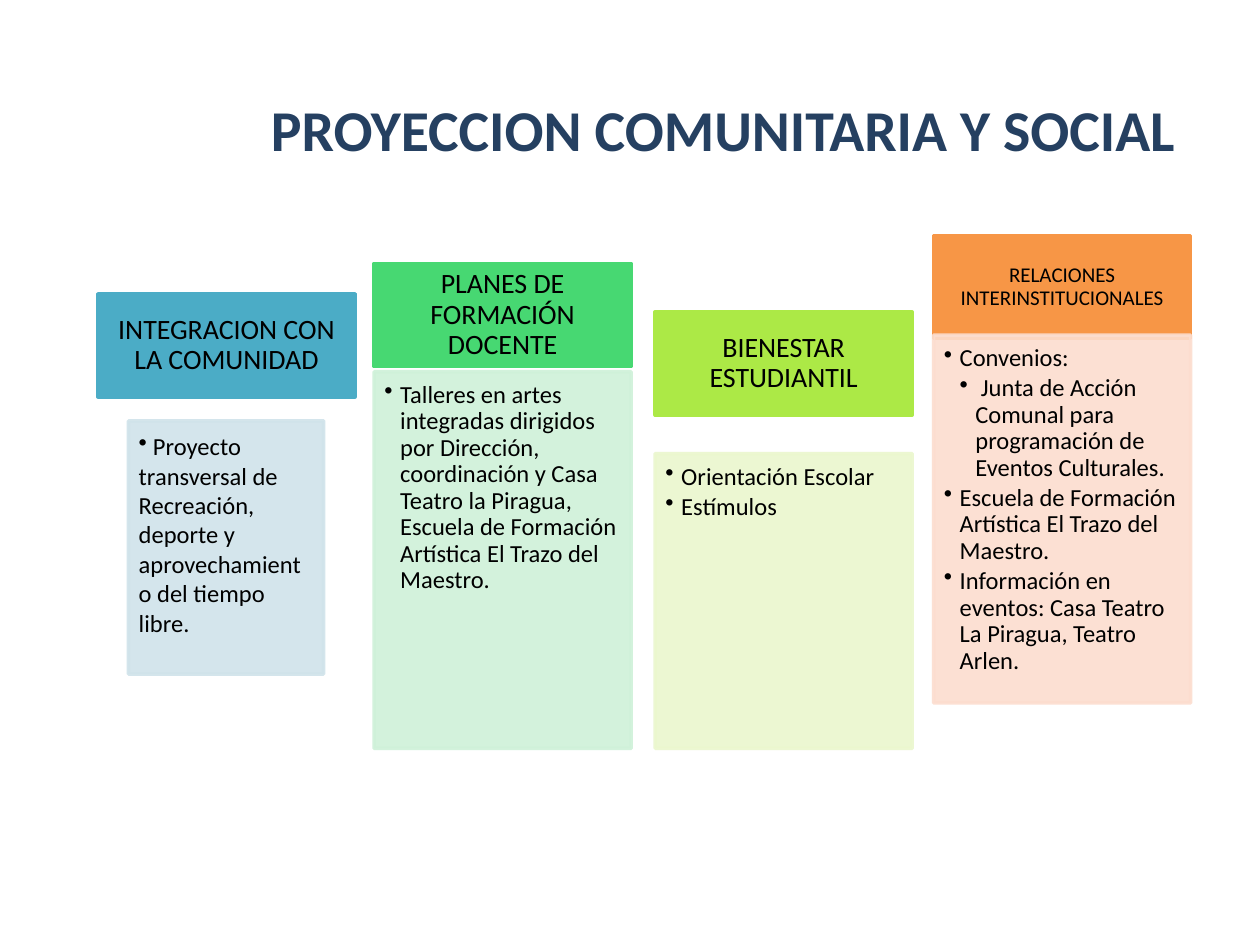
"""Build the slide on community and social outreach."""
from lxml.etree import SubElement as Sub
from pptx import Presentation as Deck
from pptx.dml.color import RGBColor as Rgb
from pptx.enum.shapes import MSO_SHAPE as Form
from pptx.enum.text import MSO_ANCHOR as Anchor, PP_ALIGN as Align
from pptx.oxml.ns import qn
from pptx.util import Pt

THEME = {"font": "Calibri", "title": "254061", "ink": "000000",
         "title_size": 33, "size": 14, "edge": 2, "alpha": 90}
TITLE = "PROYECCION COMUNITARIA Y SOCIAL"
HEAD = (146.9, 59)
BODY_PAD = (5.9, 5.9, 7.9, 8.8)
STEP = 9
CARDS = [
    {"head": "INTEGRACION CON LA COMUNIDAD", "size": 16, "pad": (8.6, 5),
     "at": (56, 167.8), "fill": "4BACC6", "tint": "D0E3EA",
     "box": (73.4, 240.5, 111.6, 144.7), "hang": False,
     "list": [(1, " Proyecto transversal de Recreación, deporte y "
                  "aprovechamiento del tiempo libre.")]},
    {"head": "PLANES DE FORMACIÓN DOCENTE", "size": 16, "pad": (8.6, 5),
     "at": (213.8, 150.5), "fill": "47D872", "tint": "CFF1D9",
     "box": (213.8, 212.4, 146.9, 215.3), "hang": True,
     "list": [(1, "Talleres en artes integradas dirigidos por Dirección, "
                  "coordinación y Casa Teatro la Piragua, Escuela de "
                  "Formación Artística El Trazo del Maestro.")]},
    {"head": "BIENESTAR ESTUDIANTIL", "size": 16, "pad": (8.6, 5),
     "at": (374.4, 178.2), "fill": "ACE946", "tint": "EBF7CE",
     "box": (374.4, 259.2, 146.9, 168.5), "hang": True,
     "list": [(1, "Orientación Escolar"), (1, "Estímulos")]},
    {"head": "RELACIONES INTERINSTITUCIONALES", "size": 12, "pad": (6.5, 3.7),
     "at": (533.5, 134.6), "fill": "F79646", "tint": "FCDDCF",
     "box": (533.5, 191.5, 146.9, 210.2), "hang": True,
     "list": [(1, "Convenios:"),
              (2, " Junta de Acción Comunal para programación de "
                  "Eventos Culturales."),
              (1, "Escuela de Formación Artística El Trazo del Maestro."),
              (1, "Información en eventos: Casa Teatro La Piragua, "
                  "Teatro Arlen.")]},
]


def write(para, text, size, hue, bold=False):
    run = para.add_run()
    run.text = text
    font = run.font
    font.name, font.size, font.bold = THEME["font"], Pt(size), bold
    font.color.rgb = Rgb.from_string(hue)


def panel(slide, box, hue, pad, anchor):
    shape = slide.shapes.add_shape(Form.RECTANGLE, *map(Pt, box))
    shape.shadow.inherit = False
    shape.fill.solid()
    shape.fill.fore_color.rgb = Rgb.from_string(hue)
    shape.line.color.rgb = Rgb.from_string(hue)
    shape.line.width = Pt(THEME["edge"])
    frame = shape.text_frame
    frame.word_wrap, frame.vertical_anchor = True, anchor
    (frame.margin_left, frame.margin_top,
     frame.margin_right, frame.margin_bottom) = map(Pt, pad)
    return shape


def fade(shape):
    for hue in shape._element.spPr.iter(qn("a:srgbClr")):
        Sub(hue, qn("a:alpha"), val=str(THEME["alpha"] * 1000))


def bullet(para, level, hang):
    props = para._p.get_or_add_pPr()
    props.set("marL", str(Pt(STEP * level if hang else 0)))
    props.set("indent", str(Pt(-STEP if hang else 0)))
    Sub(props, qn("a:buChar"), char="•")
    para.level = level
    para.alignment = Align.LEFT
    if hang:
        para.line_spacing = 0.9
        para.space_after = Pt(2.1)


def add_card(slide, card):
    head = panel(slide, card["at"] + HEAD, card["fill"],
                 card["pad"] * 2, Anchor.MIDDLE)
    para = head.text_frame.paragraphs[0]
    para.alignment, para.line_spacing = Align.CENTER, 0.9
    write(para, card["head"], card["size"], THEME["ink"])
    body = panel(slide, card["box"], card["tint"], BODY_PAD, Anchor.TOP)
    fade(body)
    frame = body.text_frame
    for i, (level, text) in enumerate(card["list"]):
        para = frame.add_paragraph() if i else frame.paragraphs[0]
        bullet(para, level, card["hang"])
        write(para, text, THEME["size"], THEME["ink"])


def main():
    deck = Deck()
    deck.slide_width, deck.slide_height = Pt(720), Pt(540)
    slide = deck.slides.add_slide(deck.slide_layouts[5])
    title = slide.shapes.title
    title.left, title.top, title.width, title.height = map(
        Pt, (106.6, 28.1, 613.4, 90))
    title.text_frame.vertical_anchor = Anchor.MIDDLE
    para = title.text_frame.paragraphs[0]
    para.alignment = Align.CENTER
    write(para, TITLE, THEME["title_size"], THEME["title"], True)
    for card in CARDS:
        add_card(slide, card)
    deck.save("out.pptx")


if __name__ == "__main__":
    main()
